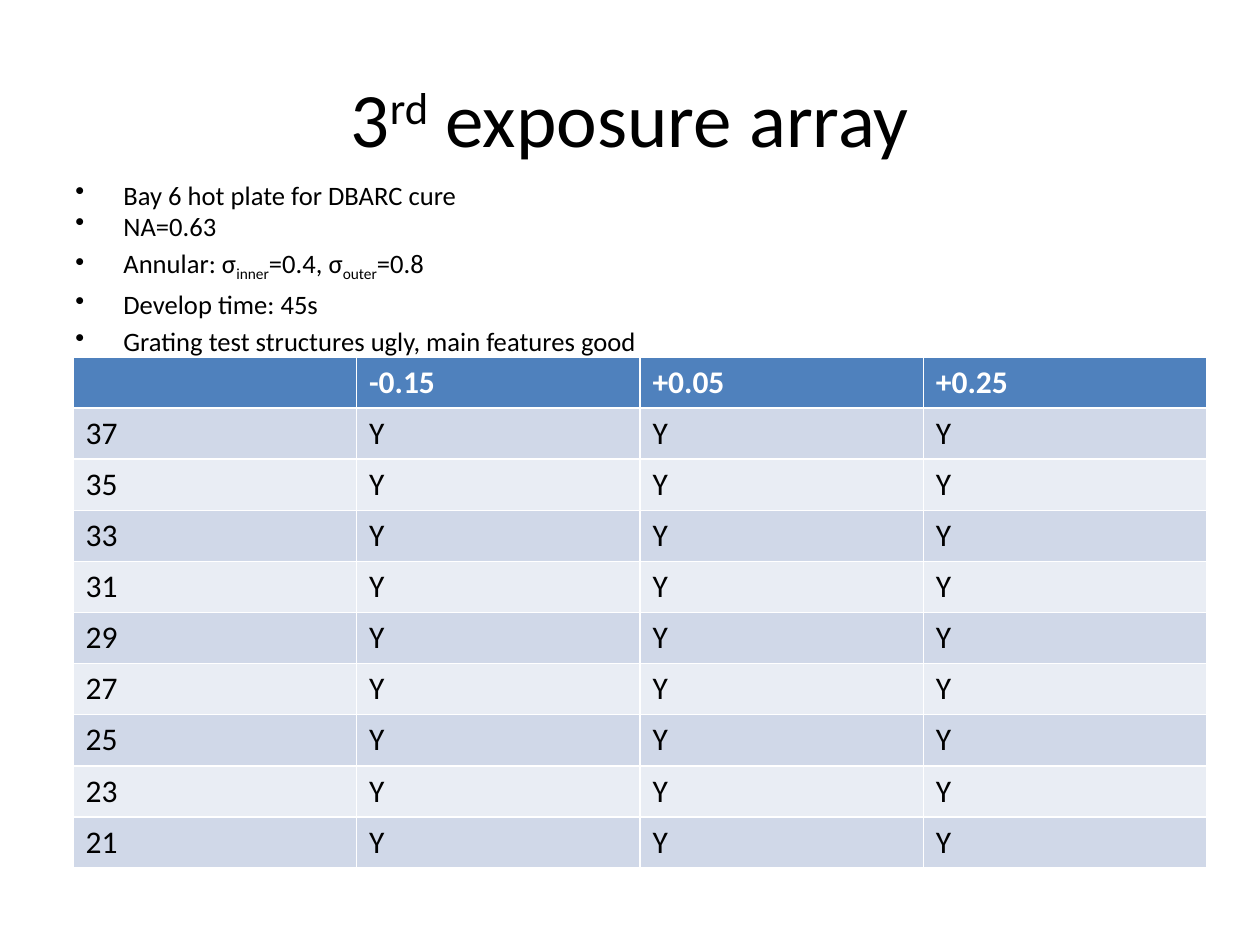
import dataclasses

import pptx
import pptx.dml.color
import pptx.enum.text
import pptx.oxml
import pptx.oxml.ns
import pptx.util

EMU_PER_PX = 914400 // 126


@dataclasses.dataclass(frozen=True)
class Theme:
    font: str = "Calibri"
    ink: str = "000000"
    header_ink: str = "FFFFFF"
    header_fill: str = "4F81BD"
    bands: tuple = ("D0D8E8", "E9EDF4")
    title_size: float = 44
    bullet_size: float = 15.2
    table_size: float = 18


THEME = Theme()
SUPERSCRIPT, SUBSCRIPT = 30000, -25000

TITLE = [("3", 0), ("rd", SUPERSCRIPT), (" exposure array", 0)]
# Each condition pairs its line spacing with its runs.
CONDITIONS = [
    (0.8, [("Bay 6 hot plate for DBARC cure", 0)]),
    (0.8, [("NA=0.63", 0)]),
    (1.0, [("Annular: σ", 0), ("inner", SUBSCRIPT), ("=0.4, σ", 0),
           ("outer", SUBSCRIPT), ("=0.8", 0)]),
    (1.0, [("Develop time: 45s", 0)]),
    (1.0, [("Grating test structures ugly, main features good", 0)]),
]
FOCUS_OFFSETS = ["-0.15", "+0.05", "+0.25"]
DOSES = range(37, 20, -2)


def px(length):
    return pptx.util.Emu(length * EMU_PER_PX)


def rgb(colour):
    return pptx.dml.color.RGBColor.from_string(colour)


def style_font(paragraph, size, colour, bold=False):
    font = paragraph.font
    font.name = THEME.font
    font.size = pptx.util.Pt(size)
    font.bold = bold
    font.color.rgb = rgb(colour)


def add_runs(paragraph, runs):
    """Add (text, baseline shift) pairs as runs."""
    for text, baseline in runs:
        run = paragraph.add_run()
        run.text = text
        if baseline:
            run._r.get_or_add_rPr().set("baseline", str(baseline))


def add_bullet(paragraph, indent):
    properties = paragraph._p.get_or_add_pPr()
    properties.set("marL", str(indent))
    properties.set("indent", str(-indent))
    bullet = pptx.oxml.parse_xml(
        f'<a:buChar {pptx.oxml.ns.nsdecls("a")} char="•"/>')
    properties.insert_element_before(
        bullet, "a:tabLst", "a:defRPr", "a:extLst")


def set_title(slide):
    title = slide.shapes.title
    title.left, title.top, title.width, title.height = map(
        px, (63, 38, 1134, 157))
    title.text_frame.vertical_anchor = pptx.enum.text.MSO_ANCHOR.MIDDLE
    heading = title.text_frame.paragraphs[0]
    heading.alignment = pptx.enum.text.PP_ALIGN.CENTER
    add_runs(heading, TITLE)
    style_font(heading, THEME.title_size, THEME.ink)


def add_conditions(slide):
    box = slide.shapes.add_textbox(*map(px, (63, 179, 1134, 179)))
    frame = box.text_frame
    frame.word_wrap = True
    for index, (line_spacing, runs) in enumerate(CONDITIONS):
        paragraph = frame.add_paragraph() if index else frame.paragraphs[0]
        add_runs(paragraph, runs)
        style_font(paragraph, THEME.bullet_size, THEME.ink)
        paragraph.line_spacing = line_spacing
        paragraph.space_before = pptx.util.Pt(3)
        add_bullet(paragraph, px(48))


def fill_cell(cell, text, fill, ink, bold):
    cell.fill.solid()
    cell.fill.fore_color.rgb = rgb(fill)
    cell.text = text
    style_font(cell.text_frame.paragraphs[0], THEME.table_size, ink, bold)


def add_exposure_table(slide):
    rows = [["", *FOCUS_OFFSETS]]
    rows += [[str(dose)] + ["Y"] * len(FOCUS_OFFSETS) for dose in DOSES]
    table = slide.shapes.add_table(
        len(rows), len(rows[0]), *map(px, (73, 357, 1134, 510))).table
    for r, values in enumerate(rows):
        header = r == 0
        fill = THEME.header_fill if header else THEME.bands[(r - 1) % 2]
        ink = THEME.header_ink if header else THEME.ink
        for c, text in enumerate(values):
            fill_cell(table.cell(r, c), text, fill, ink, header)


def main():
    deck = pptx.Presentation()
    deck.slide_width, deck.slide_height = px(1260), px(945)
    slide = deck.slides.add_slide(deck.slide_layouts.get_by_name("Title Only"))
    set_title(slide)
    add_exposure_table(slide)
    add_conditions(slide)
    deck.save("out.pptx")


if __name__ == "__main__":
    main()
